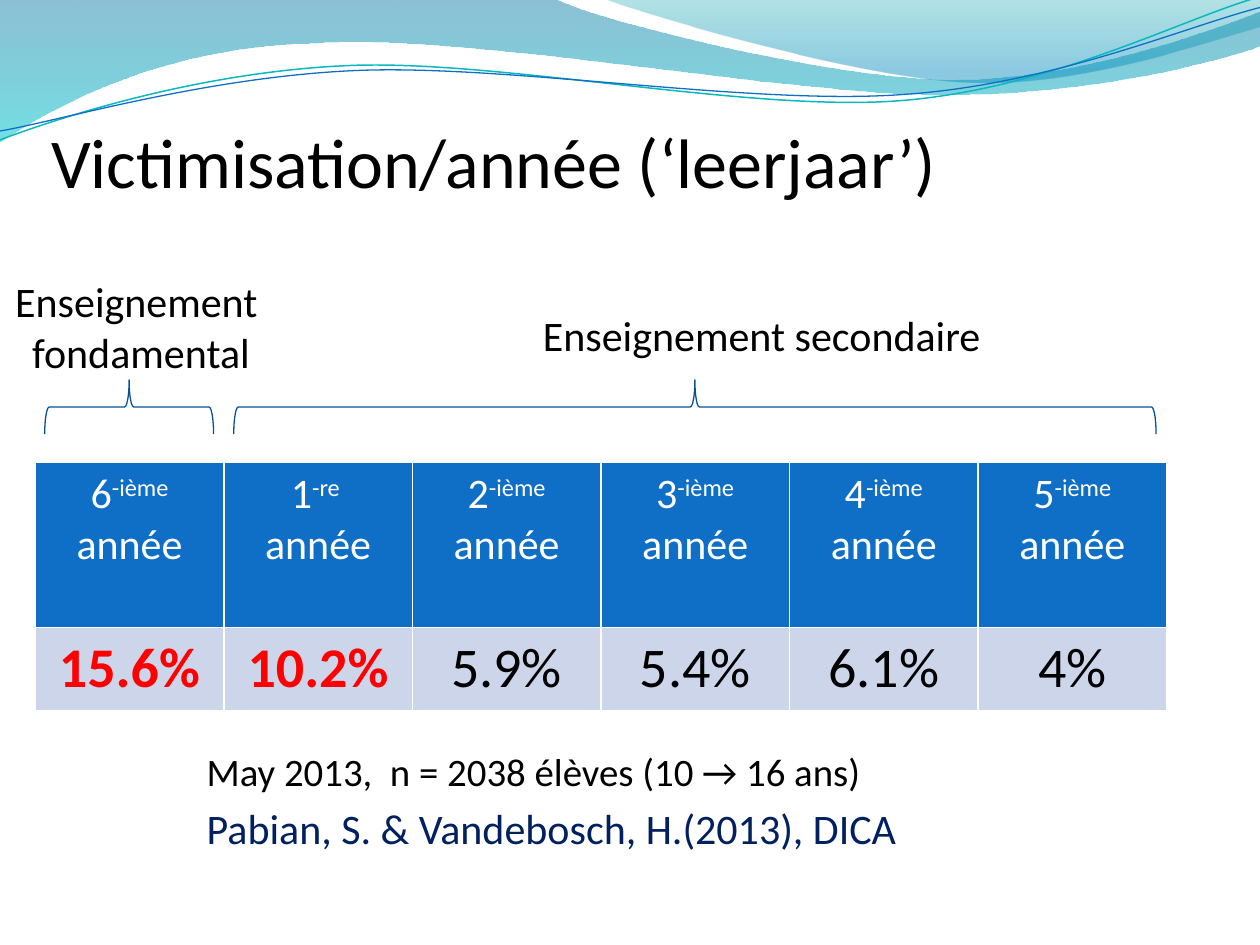
"""Builds the slide on victimisation by school year."""
import math
from dataclasses import dataclass

import lxml.etree
import pptx
import pptx.dml.color
import pptx.enum.shapes
import pptx.enum.text
import pptx.oxml.ns
import pptx.util

COLUMNS, ROWS = 10, 7.5
UNIT = pptx.util.Inches(1)
FONT = "Calibri"
TILT = 2.7
COLORS = {
    "text": "000000", "white": "FFFFFF", "source": "002060", "alert": "FF0000",
    "header": "0F6FC6", "value": "CCD5EA", "brace": "095295",
    "teal line": "0AB8BF", "blue line": "0F6FC6",
    "deep blue": "0074A1", "aqua": "00C6CF", "teal": "00A1A9", "sky": "008BBF",
}
CENTER = pptx.enum.text.PP_ALIGN.CENTER
LEFT = pptx.enum.text.PP_ALIGN.LEFT


@dataclass
class Box:
    left: float
    top: float
    width: float
    height: float


@dataclass
class Stop:
    position: float
    color: str
    opacity: int


@dataclass
class Wave:
    start: tuple
    segments: list
    stops: tuple = ()
    line: str = ""
    weight: float = 0
    pivot: tuple = ()


@dataclass
class Year:
    number: str
    suffix: str
    share: str
    alert: bool = False
    wraps: bool = False


@dataclass
class Level:
    lines: tuple
    label: Box
    brace: Box
    align: int


WAVES = [
    Wave((0, 0), [(4.4, -0.01), (4.76, 0.17, 6.64, 0.63, 7.58, 0.63),
                  (8.53, 0.63, 9.58, 0.26, 10, 0.09), (10.01, 0.36),
                  (9.83, 0.44, 8.7, 0.76, 7.46, 0.75), (6.22, 0.75, 3.82, 0.28, 2.57, 0.34),
                  (1.29, 0.36, 0.46, 0.83, -0.01, 1.13)],
         stops=(Stop(0, "deep blue", 45), Stop(1, "aqua", 55))),
    Wave((4.79, -0.01), [(5.09, 0.11, 6.82, 0.62, 7.69, 0.65),
                         (8.56, 0.69, 9.61, 0.32, 10, 0.21), (10, 0)],
         stops=(Stop(0, "teal", 30), Stop(0.8, "sky", 45))),
    Wave((0, 1.11), [(0.48, 0.93, 1.58, 0.57, 2.77, 0.52), (3.95, 0.47, 5.93, 0.89, 7.13, 0.8),
                     (8.33, 0.71, 9.38, 0.15, 9.98, -0.02)],
         line="teal line", weight=0.85, pivot=(4.99, 0.58)),
    Wave((0, 1.04), [(0.47, 0.96, 1.64, 0.61, 2.83, 0.56), (4.03, 0.51, 5.97, 0.84, 7.17, 0.75),
                     (8.36, 0.67, 9.41, 0.21, 10, 0.06)],
         line="blue line", weight=0.75, pivot=(5, 0.59)),
]
YEARS = [
    Year("6", "-ième ", "15.6%", True, True), Year("1", "-re ", "10.2%", True),
    Year("2", "-ième", "5.9%"), Year("3", "-ième", "5.4%"),
    Year("4", "-ième", "6.1%"), Year("5", "-ième", "4%"),
]
LEVELS = [
    Level(("Enseignement secondaire",), Box(4.21, 2.41, 3.78, 0.5),
          Box(5.3, -0.43, 0.43, 7.32), LEFT),
    Level(("Enseignement ", "fondamental"), Box(0, 2.14, 2.24, 0.91),
          Box(0.81, 2.56, 0.43, 1.34), CENTER),
]
SOURCES = [
    ("May 2013,  n = 2038 élèves (10 → 16 ans)", 22.2, "text"),
    ("Pabian, S. & Vandebosch, H.(2013), DICA", 24, "source"),
]


def units(count: float) -> int:
    return round(count * UNIT)


def place(box: Box) -> tuple:
    return units(box.left), units(box.top), units(box.width), units(box.height)


def move_to_front(shape, box: Box) -> None:
    shape.left, shape.top, shape.width, shape.height = place(box)
    shape.element.getparent().append(shape.element)


def rgb(name: str) -> pptx.dml.color.RGBColor:
    return pptx.dml.color.RGBColor.from_string(COLORS[name])


def style(paragraph, size: float, color: str, align: int = LEFT, bold: bool = False) -> None:
    paragraph.alignment = align
    font = paragraph.font
    font.name, font.size, font.bold = FONT, pptx.util.Pt(size), bold
    font.color.rgb = rgb(color)


def outline(shape, color: str, weight: float) -> None:
    shape.fill.background()
    shape.line.color.rgb = rgb(color)
    shape.line.width = pptx.util.Pt(weight)


def level_out(point: tuple, pivot: tuple) -> tuple:
    if not pivot:
        return point
    dx, dy = point[0] - pivot[0], point[1] - pivot[1]
    cos, sin = math.cos(math.radians(TILT)), math.sin(math.radians(TILT))
    return pivot[0] + dx * cos - dy * sin, pivot[1] + dx * sin + dy * cos


def bend(shape, segments: list) -> None:
    """Merge each three control points of a curved segment into one cubic curve."""
    legs = iter(list(shape.element.iter(pptx.oxml.ns.qn("a:lnTo"))))
    for segment in segments:
        group = [next(legs) for _ in range(len(segment) // 2)]
        if len(group) == 1:
            continue
        curve = lxml.etree.Element(pptx.oxml.ns.qn("a:cubicBezTo"))
        group[0].addprevious(curve)
        for leg in group:
            curve.append(leg[0])
            leg.getparent().remove(leg)


def draw_wave(slide, wave: Wave) -> None:
    points = [wave.start] + [segment[i:i + 2] for segment in wave.segments
                             for i in range(0, len(segment), 2)]
    start, *rest = [tuple(map(units, level_out(point, wave.pivot))) for point in points]
    builder = slide.shapes.build_freeform(*start)
    builder.add_line_segments(rest, close=bool(wave.stops))
    shape = builder.convert_to_shape()
    bend(shape, wave.segments)
    shape.shadow.inherit = False
    if not wave.stops:
        shape.rotation = 360 - TILT
        outline(shape, wave.line, wave.weight)
        return
    shape.line.fill.background()
    shape.fill.gradient()
    shape.fill.gradient_angle = 270
    for target, stop in zip(shape.fill.gradient_stops, wave.stops):
        target.position = stop.position
        target.color.rgb = rgb(stop.color)
    tint = pptx.oxml.ns.qn("a:srgbClr")
    for color, stop in zip(shape.element.spPr.iter(tint), wave.stops):
        lxml.etree.SubElement(color, pptx.oxml.ns.qn("a:alpha"), val=str(stop.opacity * 1000))


def draw_level(slide, level: Level) -> None:
    brace = slide.shapes.add_shape(pptx.enum.shapes.MSO_SHAPE.RIGHT_BRACE, *place(level.brace))
    brace.rotation = 270
    brace.shadow.inherit = False
    outline(brace, "brace", 0.75)
    label = slide.shapes.add_textbox(*place(level.label)).text_frame
    label.word_wrap = True
    label.text = "\n".join(level.lines)
    for paragraph in label.paragraphs:
        style(paragraph, 24, "text", level.align)


def fill_title(title) -> None:
    move_to_front(title, Box(0.28, 0.36, 9, 1.25))
    frame = title.text_frame
    frame.text = " Victimisation/année (‘leerjaar’)"
    frame.auto_size = pptx.enum.text.MSO_AUTO_SIZE.NONE
    frame.vertical_anchor = pptx.enum.text.MSO_ANCHOR.BOTTOM
    frame.margin_left = frame.margin_right = frame.margin_bottom = 0
    style(frame.paragraphs[0], 40, "text")


def fill_sources(body) -> None:
    move_to_front(body, Box(1.54, 5.88, 6.93, 0.94))
    frame = body.text_frame
    frame.auto_size = pptx.enum.text.MSO_AUTO_SIZE.NONE
    frame.text = "\n".join(line for line, _, _ in SOURCES)
    for paragraph, (_, size, color) in zip(frame.paragraphs, SOURCES):
        style(paragraph, size, color)
        paragraph.space_before = pptx.util.Pt(size * 0.2)
        properties = paragraph._p.get_or_add_pPr()
        properties.set("marL", str(units(0.38)))
        properties.set("indent", str(-units(0.38)))
        properties.insert_element_before(
            lxml.etree.Element(pptx.oxml.ns.qn("a:buNone")), "a:tabLst", "a:defRPr", "a:extLst")


def draw_years(slide) -> None:
    heights = (1.31, 0.66)
    box = Box(0.28, 3.67, 8.98, sum(heights))
    table = slide.shapes.add_table(len(heights), len(YEARS), *place(box)).table
    for row, height in zip(table.rows, heights):
        row.height = units(height)
    for column, year in enumerate(YEARS):
        header, value = table.cell(0, column), table.cell(1, column)
        for cell, color in ((header, "header"), (value, "value")):
            cell.fill.solid()
            cell.fill.fore_color.rgb = rgb(color)
        ordinal = header.text_frame.paragraphs[0]
        ordinal.add_run().text = year.number
        suffix = ordinal.add_run()
        suffix.text = year.suffix
        suffix.font._element.set("baseline", "30000")
        noun = ordinal if year.wraps else header.text_frame.add_paragraph()
        noun.add_run().text = "année"
        for paragraph in header.text_frame.paragraphs:
            style(paragraph, 24, "white", CENTER)
        value.text = year.share
        style(value.text_frame.paragraphs[0], 32, "alert" if year.alert else "text",
              CENTER, year.alert)


def main() -> None:
    deck = pptx.Presentation()
    deck.slide_width, deck.slide_height = units(COLUMNS), units(ROWS)
    slide = deck.slides.add_slide(deck.slide_layouts[1])
    for wave in WAVES:
        draw_wave(slide, wave)
    fill_title(slide.shapes.title)
    fill_sources(slide.placeholders[1])
    draw_years(slide)
    for level in LEVELS:
        draw_level(slide, level)
    deck.save("out.pptx")


if __name__ == "__main__":
    main()
